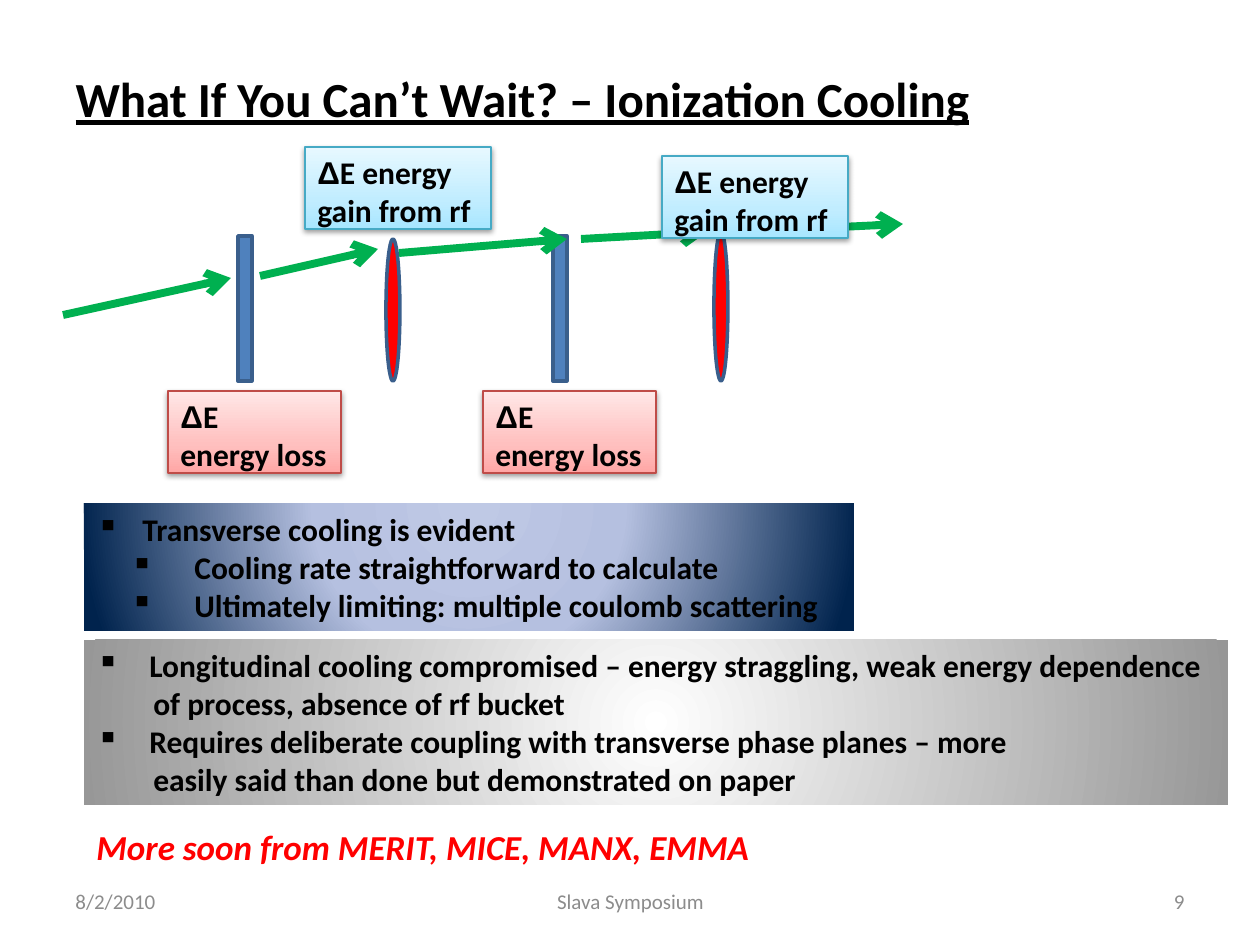
"""Build the ionization cooling slide."""
from pptx import Presentation
from pptx import util as u
from pptx.dml.color import RGBColor
from pptx.enum import shapes, text
from pptx.oxml import parse_xml
from pptx.oxml.ns import nsdecls, qn

PIXELS_PER_INCH = 126
LEFT, CENTER, RIGHT = text.PP_ALIGN.LEFT, text.PP_ALIGN.CENTER, text.PP_ALIGN.RIGHT
LOSS = ([(0, "FFA6A5"), (35, "FFC0BF"), (100, "FFE7E7")], "BF4C48")
GAIN = ([(0, "A7E6FF"), (35, "C1EDFF"), (100, "E7F8FF")], "46AAC5")
UPWARD = '<a:lin ang="16200000" scaled="1"/>'
SHADOW = ('<a:outerShdw blurRad="40000" dist="20000" dir="5400000" rotWithShape="0">'
          '<a:srgbClr val="000000"><a:alpha val="38000"/></a:srgbClr></a:outerShdw>')


def px(length):
    """Turn pixels into EMU."""
    return u.Emu(round(length * 914400 / PIXELS_PER_INCH))


def color(value):
    """Turn a hex string into a colour."""
    return RGBColor.from_string(value)


def element(tag, content="", attributes=""):
    """Make a DrawingML element."""
    return parse_xml(f"<a:{tag} {nsdecls('a')} {attributes}>{content}</a:{tag}>")


def circular(top, bottom):
    """Describe a circular gradient centred across the shape."""
    return (f'<a:path path="circle"><a:fillToRect l="50000" t="{top * 1000}" '
            f'r="50000" b="{bottom * 1000}"/></a:path>')


def format_paragraph(paragraph, size, fill="000000", align=LEFT, **styles):
    """Align a paragraph and format its runs."""
    paragraph.alignment = align
    for run in paragraph.runs:
        font = run.font
        font.name = "Arial" if run.text == "Δ" else "Calibri"
        font.size = u.Pt(size)
        font.color.rgb = color(fill)
        for name, value in styles.items():
            setattr(font, name, value)


def indent(paragraph, margin, hanging, bullet):
    """Set the indents of a paragraph and its bullet."""
    properties = paragraph._p.get_or_add_pPr()
    properties.set("marL", str(px(margin)))
    properties.set("indent", str(-px(hanging)))
    if bullet:
        properties.append(element("buChar", attributes='char="▪"'))


def add_text(slide, box, content, size, fill, align=LEFT, anchor=text.MSO_ANCHOR.TOP, **styles):
    """Add a one-line text box."""
    frame = slide.shapes.add_textbox(*map(px, box)).text_frame
    frame.word_wrap = True
    frame.vertical_anchor = anchor
    frame.text = content
    format_paragraph(frame.paragraphs[0], size, fill, align, **styles)


def add_title(slide, content):
    """Place and format the title."""
    title = slide.shapes.title
    title.left, title.top, title.width, title.height = map(px, (63, 38, 1134, 120))
    title.text_frame.text = content
    title.text_frame.vertical_anchor = text.MSO_ANCHOR.MIDDLE
    format_paragraph(title.text_frame.paragraphs[0], 28, bold=True, underline=True)


def add_solid(slide, kind, box, fill):
    """Add an outlined solid shape."""
    shape = slide.shapes.add_shape(kind, *map(px, box))
    shape.shadow.inherit = False
    shape.fill.solid()
    shape.fill.fore_color.rgb = color(fill)
    shape.line.color.rgb = color("3A5F8C")
    shape.line.width = u.Pt(2)


def add_arrow(slide, start, end):
    """Add a green beam arrow."""
    arrow = slide.shapes.add_connector(shapes.MSO_CONNECTOR.STRAIGHT, *map(px, start + end))
    arrow.line.color.rgb = color("00B050")
    arrow.line.width = u.Pt(4.5)
    arrow.line._get_or_add_ln().append(element("tailEnd", attributes='type="arrow"'))
    arrow._element.spPr.append(element("effectLst"))


def add_gradient_box(slide, box, stops, direction):
    """Add a borderless rectangle with a gradient, ready for text."""
    shape = slide.shapes.add_shape(shapes.MSO_SHAPE.RECTANGLE, *map(px, box))
    shape.shadow.inherit = False
    shape.line.fill.background()
    shape.fill.gradient()
    properties = shape._element.spPr
    stop_list = "".join(f'<a:gs pos="{position * 1000}"><a:srgbClr val="{value}"/></a:gs>'
                        for position, value in stops)
    properties.replace(properties.find(qn("a:gradFill")),
                       element("gradFill", f"<a:gsLst>{stop_list}</a:gsLst>{direction}"))
    frame = shape.text_frame
    frame.word_wrap = True
    frame.vertical_anchor = text.MSO_ANCHOR.TOP
    frame.margin_right = 0
    return shape


def add_label(slide, box, style, first, second):
    """Add a shadowed energy label of two lines."""
    stops, border = style
    shape = add_gradient_box(slide, box, stops, UPWARD)
    shape.line.color.rgb = color(border)
    shape.line.width = u.Pt(0.75)
    shape._element.spPr.find(qn("a:effectLst")).append(parse_xml(
        SHADOW.replace("<a:outerShdw", f"<a:outerShdw {nsdecls('a')}", 1)))
    frame = shape.text_frame
    frame.text = f"Δ\n{second}"
    frame.paragraphs[0].add_run().text = first
    for paragraph in frame.paragraphs:
        format_paragraph(paragraph, 18, bold=True)


def add_panel(slide, box, stops, direction, lines):
    """Add a panel of indented lines."""
    frame = add_gradient_box(slide, box, stops, direction).text_frame
    frame.text = "\n".join(line[0] for line in lines)
    for paragraph, (_, margin, hanging) in zip(frame.paragraphs, lines):
        format_paragraph(paragraph, 18, bold=True)
        indent(paragraph, margin, hanging, bullet=hanging > 0)


def add_beamline(slide):
    """Draw absorbers, cavities, beam arrows and energy labels."""
    for left in (238, 553):
        add_solid(slide, shapes.MSO_SHAPE.RECTANGLE, (left, 236, 14, 145), "4F81BD")
    for left, top in ((386, 239), (714, 232)):
        add_solid(slide, shapes.MSO_SHAPE.OVAL, (left, top, 14, 381 - top), "FF0000")
    for start, end in (((63, 315), (231, 278)), ((260, 276), (378, 249)),
                       ((399, 253), (567, 239)), ((581, 239), (707, 232)),
                       ((735, 232), (903, 224))):
        add_arrow(slide, start, end)
    for left in (168, 483):
        add_label(slide, (left, 391, 173, 82), LOSS, "E", "energy loss")
    for left, top in ((305, 147), (662, 156)):
        add_label(slide, (left, top, 186, 82), GAIN, "E energy", "gain from rf")


def main():
    """Build and save the slide."""
    presentation = Presentation()
    presentation.slide_width, presentation.slide_height = px(1260), px(945)
    slide = presentation.slides.add_slide(presentation.slide_layouts[5])
    add_title(slide, "What If You Can’t Wait? – Ionization Cooling")
    for left, width, content, align in ((63, 294, "8/2/2010", LEFT),
                                        (431, 399, "Slava Symposium", CENTER),
                                        (903, 294, "9", RIGHT)):
        add_text(slide, (left, 876, width, 50), content, 12, "8C8C8C", align,
                 text.MSO_ANCHOR.MIDDLE)
    add_beamline(slide)
    add_panel(slide, (84, 504, 770, 127),
              [(0, "BFC9E5"), (40, "B5C0E0"), (100, "00234D")], circular(-80, 180),
              [("Transverse cooling is evident", 46, 46),
               ("Cooling rate straightforward to calculate", 98, 64),
               ("Ultimately limiting: multiple coulomb scattering", 98, 64)])
    add_panel(slide, (84, 640, 1144, 165),
              [(0, "FFFFFF"), (100, "979797")], circular(50, 50),
              [("Longitudinal cooling compromised – energy straggling, weak energy dependence",
                53, 53),
               ("of process, absence of rf bucket", 57, 0),
               ("Requires deliberate coupling with transverse phase planes – more", 53, 53),
               ("easily said than done but demonstrated on paper", 57, 0)])
    add_text(slide, (84, 819, 683, 55), "More soon from MERIT, MICE, MANX, EMMA", 20,
             "FF0000", bold=True, italic=True)
    presentation.save("out.pptx")


if __name__ == "__main__":
    main()
